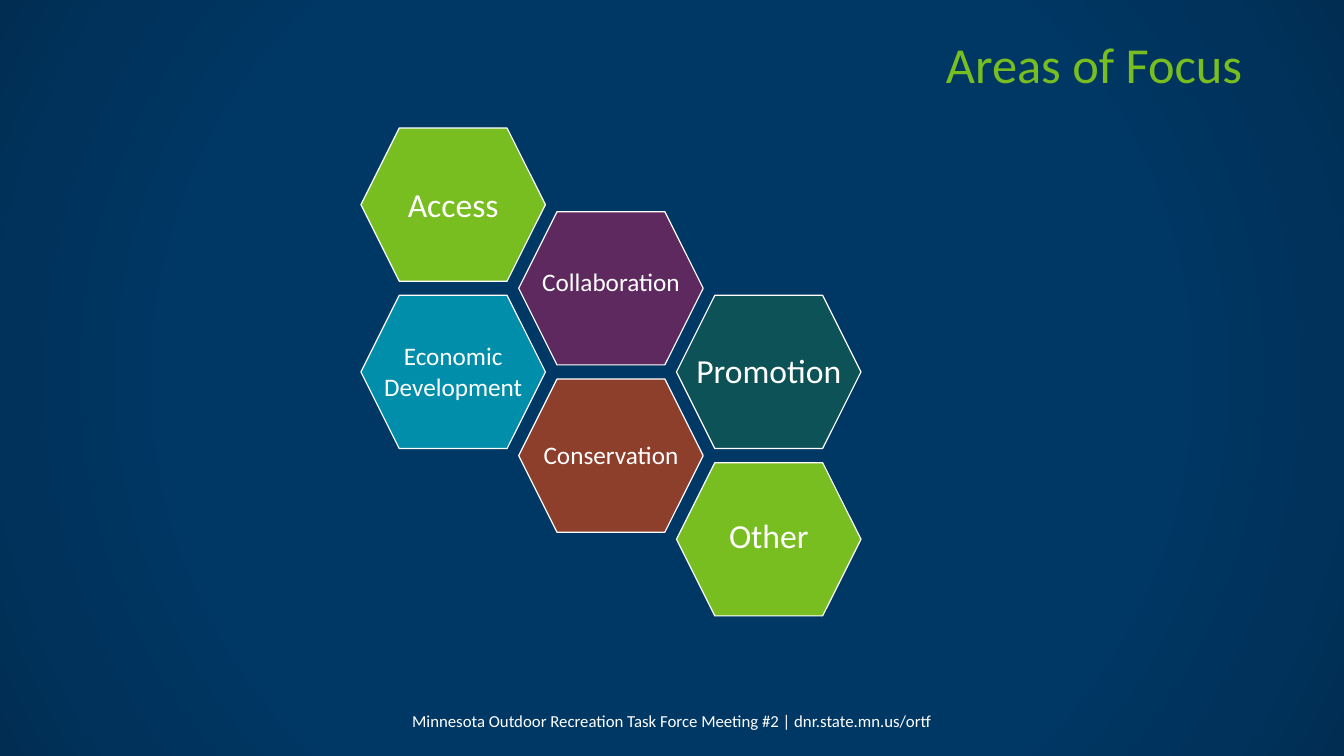
from pptx import Presentation
from pptx.dml.color import RGBColor
from pptx.enum.shapes import MSO_SHAPE as SHAPE
from pptx.enum.text import MSO_ANCHOR as ANCHOR, PP_ALIGN as ALIGN
from pptx.oxml import parse_xml
from pptx.oxml.ns import nsdecls, qn
from pptx.util import Inches, Pt

WHITE = RGBColor(0xFF, 0xFF, 0xFF)
GREEN = RGBColor(0x78, 0xBE, 0x21)
RUST = RGBColor(0x8D, 0x3F, 0x2B)
BLUE = RGBColor(0x00, 0x8E, 0xAA)
PURPLE = RGBColor(0x5D, 0x29, 0x5F)
TEAL = RGBColor(0x0D, 0x52, 0x57)
BACKDROP = [
    (63, RGBColor(0x00, 0x38, 0x65)),
    (86, RGBColor(0x00, 0x32, 0x5B)),
    (100, RGBColor(0x00, 0x2D, 0x51)),
]

TITLE = "Areas of Focus"
FOOTER = "Minnesota Outdoor Recreation Task Force Meeting #2\u2002|\u2002dnr.state.mn.us/ortf".replace("\u2002", " ")
# label, column, half-row, fill, size, label drop, label height
AREAS = [
    ("Access", 0, 0, GREEN, 24, 0.51, 0.5),
    ("Conservation", 1, 3, RUST, 18, 0.55, 0.4),
    ("Economic Development", 0, 2, BLUE, 18, 0.4, 0.71),
    ("Collaboration", 1, 1, PURPLE, 18, 0.49, 0.4),
    ("Promotion", 2, 2, TEAL, 24, 0.49, 0.5),
    ("Other", 2, 4, GREEN, 24, 0.47, 0.5),
]
LEFT, TOP = 3.58, 1.27
COL, HALF_ROW = 1.565, 0.83
HEX_W, HEX_H = 1.83, 1.52
LABEL_W = 1.69


def add_text(s, text, box, size, color, align=ALIGN.CENTER, anchor=ANCHOR.TOP):
    tf = s.shapes.add_textbox(*map(Inches, box)).text_frame
    tf.word_wrap = True
    tf.vertical_anchor = anchor
    p = tf.paragraphs[0]
    p.text = text
    p.alignment = align
    font = p.runs[0].font
    font.name, font.size, font.color.rgb = "Calibri", Pt(size), color
    return p


def add_area(s, label, col, half_row, fill, size, drop, height):
    x, y = LEFT + col * COL, TOP + half_row * HALF_ROW
    sp = s.shapes.add_shape(SHAPE.HEXAGON, *map(Inches, (x, y, HEX_W, HEX_H)))
    sp.shadow.inherit = False
    sp.fill.solid()
    sp.fill.fore_color.rgb = fill
    sp.line.color.rgb = WHITE
    sp.line.width = Pt(0.85)
    box = (x + (HEX_W - LABEL_W) / 2, y + drop, LABEL_W, height)
    add_text(s, label, box, size, WHITE)


def set_backdrop(s):
    s.background.fill.gradient()
    grad = s._element.find(".//" + qn("a:gradFill"))
    stops = "".join(
        f'<a:gs pos="{pos * 1000}"><a:srgbClr val="{color}"/></a:gs>'
        for pos, color in BACKDROP
    )
    grad.getparent().replace(grad, parse_xml(
        f'<a:gradFill {nsdecls("a")} rotWithShape="1"><a:gsLst>{stops}</a:gsLst>'
        '<a:path path="circle"><a:fillToRect l="50000" t="50000" r="50000" b="50000"/>'
        '</a:path></a:gradFill>'))


def main():
    prs = Presentation()
    prs.slide_width, prs.slide_height = Inches(13.33), Inches(7.5)
    s = prs.slides.add_slide(prs.slide_layouts[6])
    set_backdrop(s)
    title = add_text(s, TITLE, (0.92, 0.17, 11.5, 1), 36, GREEN, ALIGN.RIGHT, ANCHOR.MIDDLE)
    title.line_spacing = 0.9
    for area in AREAS:
        add_area(s, *area)
    add_text(s, FOOTER, (3.61, 6.95, 6.11, 0.4), 12, WHITE, anchor=ANCHOR.MIDDLE)
    prs.save("out.pptx")


if __name__ == "__main__":
    main()
